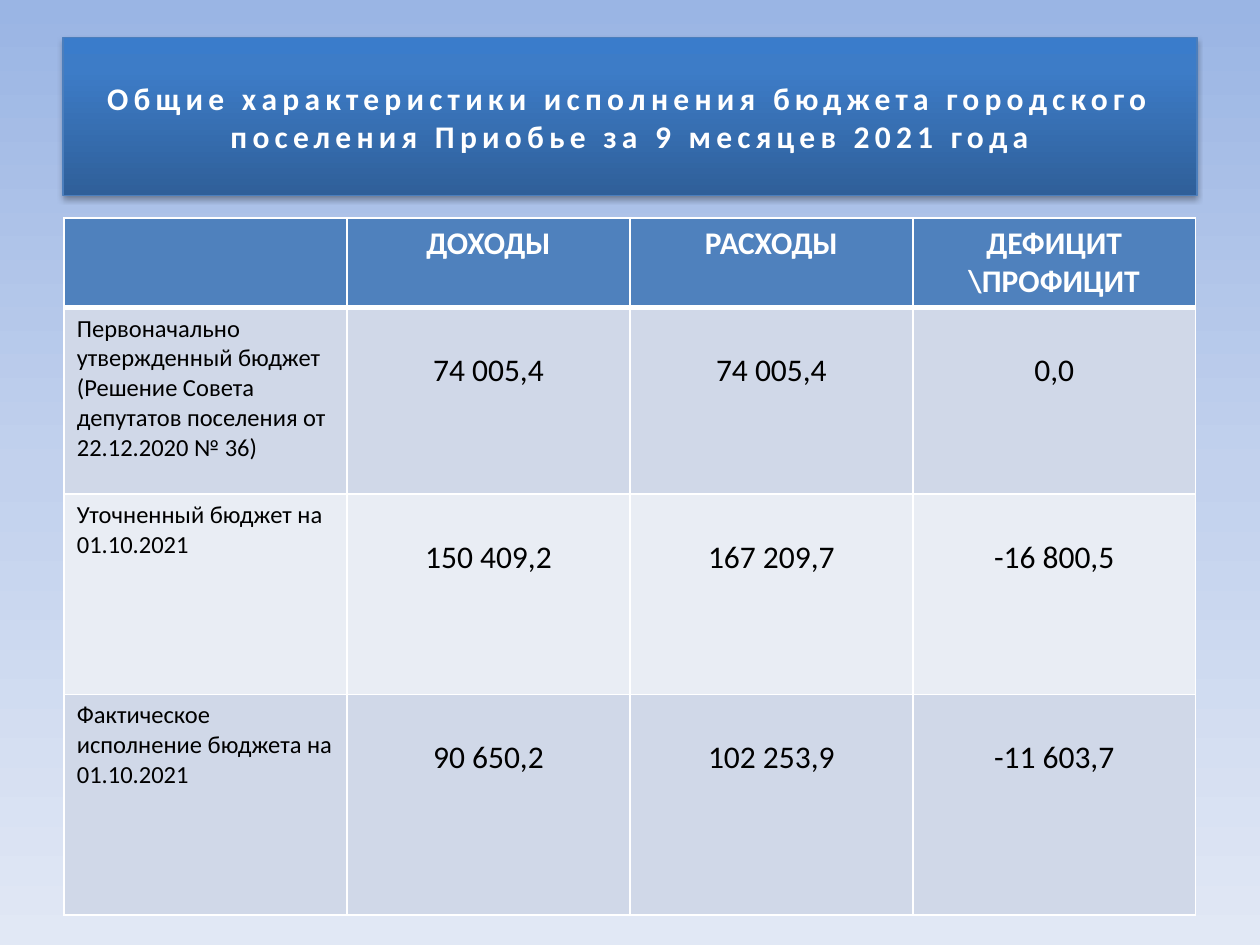
from lxml import etree
from pptx import Presentation
from pptx.dml.color import RGBColor
from pptx.enum import shapes, text
from pptx.oxml import ns
from pptx.util import Emu, Inches, Pt

# Content
TITLE = "Общие характеристики исполнения бюджета городского поселения Приобье за 9 месяцев 2021 года"
HEADER = ["", "ДОХОДЫ", "РАСХОДЫ", "ДЕФИЦИТ \\ПРОФИЦИТ"]
BUDGETS = [
    ["Первоначально утвержденный бюджет (Решение Совета депутатов поселения от 22.12.2020 № 36)",
     "74 005,4", "74 005,4", "0,0"],
    ["Уточненный бюджет на 01.10.2021", "150 409,2", "167 209,7", "-16 800,5"],
    ["Фактическое исполнение бюджета на 01.10.2021", "90 650,2", "102 253,9", "-11 603,7"],
]

# Style and grid
FONT = "Calibri"
WHITE, BLACK, HEAD_FILL = "FFFFFF", "000000", "4F81BD"
BANDS = ["D0D8E8", "E9EDF4"]
PAGE_STOPS = [(0, "9AB5E4"), (50, "C2D1ED"), (100, "E1E8F5")]
TITLE_STOPS = [(0, "2F5F99"), (80, "3D7CC7"), (100, "3A7CCB")]
PAGE_WIDTH, PAGE_HEIGHT = Inches(10), Inches(7.5)
TITLE_SHARES = (0.05, 0.04, 0.9, 0.167)
TABLE_LEFT, TABLE_TOP = Inches(0.51), Inches(1.73)
COLUMN_WIDTH = Inches(2.245)
ROW_HEIGHTS = [0.71, 1.48, 1.59, 1.75]


def color(value):
    return RGBColor.from_string(value)


def add_node(parent, tag, **attributes):
    node = etree.SubElement(parent, ns.qn(tag))
    for name, value in attributes.items():
        node.set(name, str(value))
    return node


def set_gradient(fill, root, stops, angle):
    """Angle is counter-clockwise, in degrees."""
    fill.gradient()
    fill.gradient_angle = angle
    stop_list = root.find(".//" + ns.qn("a:gsLst"))
    for old_stop in list(stop_list):
        stop_list.remove(old_stop)
    for position, value in stops:
        stop = add_node(stop_list, "a:gs", pos=position * 1000)
        add_node(stop, "a:srgbClr", val=value)


def style_text(frame, size, value, bold=False, centered=True):
    for para in frame.paragraphs:
        para.alignment = text.PP_ALIGN.CENTER if centered else text.PP_ALIGN.LEFT
        for font in [para.font] + [span.font for span in para.runs]:
            font.name, font.size, font.bold = FONT, Pt(size), bold
            font.color.rgb = color(value)


def set_borders(cell, **widths):
    properties = cell._tc.get_or_add_tcPr()
    for index, side in enumerate("LRTB"):
        line = etree.Element(ns.qn("a:ln" + side), w=str(Pt(widths.get(side, 1))))
        add_node(add_node(line, "a:solidFill"), "a:srgbClr", val=WHITE)
        properties.insert(index, line)


deck = Presentation()
deck.slide_width, deck.slide_height = PAGE_WIDTH, PAGE_HEIGHT
page = deck.slides.add_slide(deck.slide_layouts[6])
set_gradient(page.background.fill, page.element, PAGE_STOPS, 270)

# Title banner
left, top, width, height = TITLE_SHARES
banner = page.shapes.add_shape(
    shapes.MSO_SHAPE.RECTANGLE,
    Emu(int(left * PAGE_WIDTH)), Emu(int(top * PAGE_HEIGHT)),
    Emu(int(width * PAGE_WIDTH)), Emu(int(height * PAGE_HEIGHT)))
set_gradient(banner.fill, banner.element, TITLE_STOPS, 90)
banner.line.color.rgb = color("4B7EBC")
banner.line.width = Pt(0.75)
banner.shadow.inherit = False
effects = banner.element.spPr.find(ns.qn("a:effectLst"))
shadow = add_node(effects, "a:outerShdw", blurRad=Pt(3.1), dist=Pt(1.8),
                  dir=5400000, rotWithShape=0)
add_node(add_node(shadow, "a:srgbClr", val=BLACK), "a:alpha", val=35000)
frame = banner.text_frame
frame.text = TITLE
frame.word_wrap = True
frame.vertical_anchor = text.MSO_ANCHOR.MIDDLE
style_text(frame, 18, WHITE, bold=True)
frame.paragraphs[0].runs[0].font._element.set("spc", "300")

# Budget table
rows = [HEADER] + BUDGETS
table = page.shapes.add_table(
    len(rows), len(HEADER), TABLE_LEFT, TABLE_TOP,
    COLUMN_WIDTH * len(HEADER), Inches(sum(ROW_HEIGHTS))).table
for column in table.columns:
    column.width = COLUMN_WIDTH
for r, (row, row_height) in enumerate(zip(rows, ROW_HEIGHTS)):
    table.rows[r].height = Inches(row_height)
    for c, wording in enumerate(row):
        cell = table.cell(r, c)
        cell.text = wording
        is_header, is_label = r == 0, c == 0
        cell.fill.solid()
        cell.fill.fore_color.rgb = color(HEAD_FILL if is_header else BANDS[(r - 1) % 2])
        set_borders(cell, T=3 if r == 1 else 1, B=3 if is_header else 1)
        if is_header:
            style_text(cell.text_frame, 18, WHITE, bold=True)
        elif is_label:
            style_text(cell.text_frame, 14, BLACK, centered=False)
        else:
            style_text(cell.text_frame, 18, BLACK)
            cell.margin_top = Inches(0.35)  # figures sit one line lower

deck.save("out.pptx")
